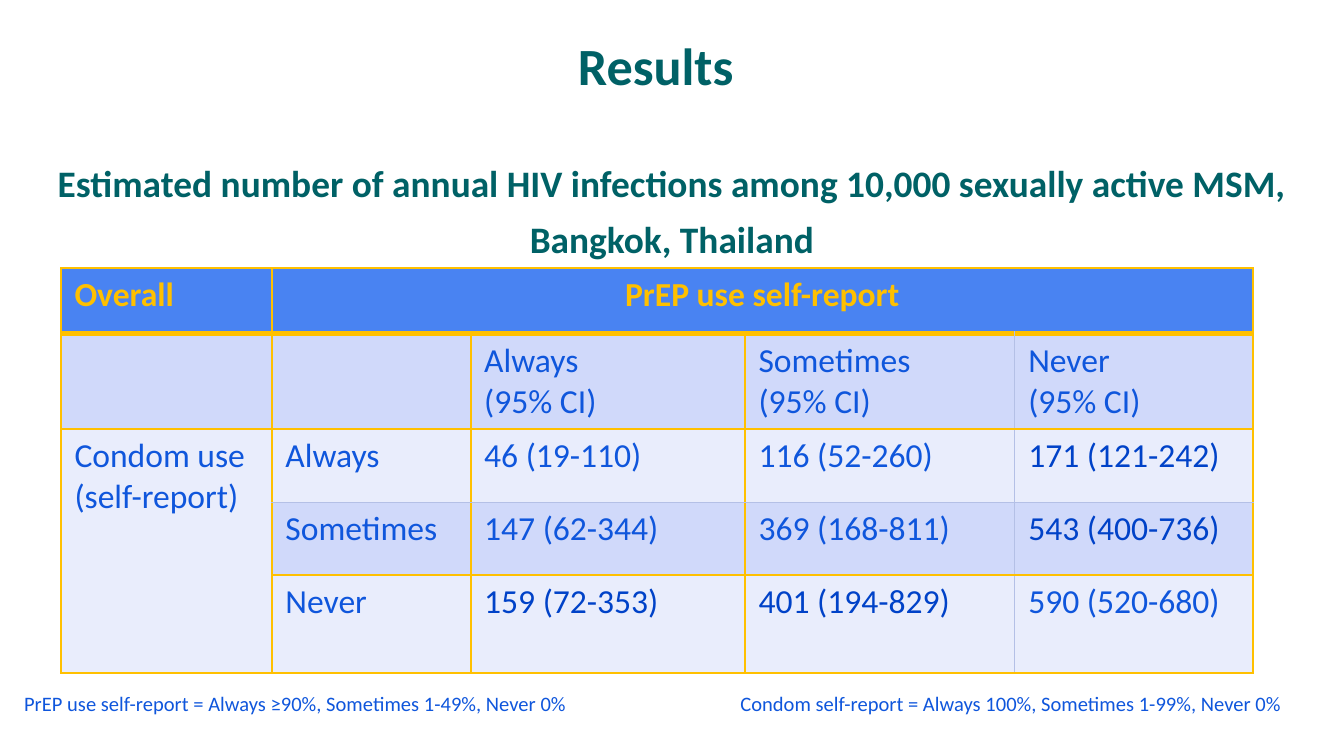
"""Build the results slide with its table of estimated infections."""
from dataclasses import dataclass

from lxml import etree
from pptx import Presentation
from pptx.dml.color import RGBColor
from pptx.enum.text import MSO_ANCHOR, MSO_AUTO_SIZE, PP_ALIGN
from pptx.oxml.ns import qn
from pptx.shapes.base import BaseShape
from pptx.slide import Slide
from pptx.table import _Cell
from pptx.text.text import TextFrame
from pptx.util import Pt

LEFT, CENTER = PP_ALIGN.LEFT, PP_ALIGN.CENTER
TOP, BOTTOM = MSO_ANCHOR.TOP, MSO_ANCHOR.BOTTOM
FIXED, GROW = MSO_AUTO_SIZE.NONE, MSO_AUTO_SIZE.SHAPE_TO_FIT_TEXT

TEAL = RGBColor(0x00, 0x61, 0x66)
GOLD = RGBColor(0xFF, 0xC0, 0x00)
BLUE = RGBColor(0x0F, 0x56, 0xDC)
NAVY = RGBColor(0x00, 0x42, 0xC8)
HEADER = RGBColor(0x49, 0x83, 0xF2)
DARK = RGBColor(0xD0, 0xD9, 0xFA)
LIGHT = RGBColor(0xE9, 0xED, 0xFC)
HAIR = RGBColor(0xB4, 0xC0, 0xE6)

COLS = (113, 106.5, 147, 144.5, 127.5)
ROWS = (35.3, 46, 39, 39, 52.5)
CELLS = (
    ("Overall", "PrEP use self-report", "", "", ""),
    ("", "", "Always\n(95% CI)", "Sometimes\n(95% CI)", "Never\n(95% CI)"),
    ("Condom use (self-report)", "Always", "46 (19-110)", "116 (52-260)", "171 (121-242)"),
    ("", "Sometimes", "147 (62-344)", "369 (168-811)", "543 (400-736)"),
    ("", "Never", "159 (72-353)", "401 (194-829)", "590 (520-680)"),
)
STRONG = {(2, 4), (3, 4), (4, 2), (4, 3)}


@dataclass
class Label:
    """Hold the text, place and look of one text box."""
    text: str
    left: float
    top: float
    width: float
    height: float
    size: float
    color: RGBColor
    bold: bool = False
    align: PP_ALIGN = LEFT
    anchor: MSO_ANCHOR = TOP
    fit: MSO_AUTO_SIZE = GROW
    lead: float | None = None


HEAD = Label("Estimated number of annual HIV infections among 10,000 sexually active MSM, "
             "Bangkok, Thailand", 0, 78.5, 720, 64.8, 20, TEAL, True, CENTER, BOTTOM, FIXED, 30)
LABELS = (
    Label("Results", 290, 6.5, 122.5, 48.5, 28, TEAL, True, CENTER, BOTTOM, FIXED, 30),
    Label("PrEP use self-report = Always ≥90%, Sometimes 1-49%, Never 0%",
          5.8, 366.5, 317, 20.9, 11, BLUE),
    Label("Condom self-report = Always 100%, Sometimes 1-99%, Never 0%",
          389.5, 366.5, 317, 20.9, 11, BLUE),
)


def write(frame: TextFrame, text: str, size: float, color: RGBColor,
          bold: bool, align: PP_ALIGN) -> None:
    """Fill a text frame and format its runs."""
    frame.text = text
    look = {"name": "Calibri", "size": Pt(size), "bold": bold}
    for para in frame.paragraphs:
        para.alignment = align
        for run in para.runs:
            for key, value in look.items():
                setattr(run.font, key, value)
            run.font.color.rgb = color


def place(shape: BaseShape, label: Label) -> None:
    """Move a text shape into place and set its text."""
    for key in ("left", "top", "width", "height"):
        setattr(shape, key, Pt(getattr(label, key)))
    frame = shape.text_frame
    write(frame, label.text, label.size, label.color, label.bold, label.align)
    look = {"word_wrap": True, "auto_size": label.fit, "vertical_anchor": label.anchor}
    for key, value in look.items():
        setattr(frame, key, value)
    if label.lead:
        frame.paragraphs[0].line_spacing = Pt(label.lead)


def rule(cell: _Cell, side: str, color: RGBColor, width: float) -> None:
    """Draw one border of a cell."""
    props = cell._tc.get_or_add_tcPr()
    line = etree.SubElement(props, qn(f"a:ln{side}"), w=str(Pt(width)))
    fill = etree.SubElement(line, qn("a:solidFill"))
    etree.SubElement(fill, qn("a:srgbClr"), val=str(color))


def border(cell: _Cell, row: int, col: int) -> None:
    """Draw the four borders of a cell by its place in the grid."""
    thin, gold, thick = (HAIR, 0.5), (GOLD, 1), (GOLD, 3)
    across = {1: thick, 3: thin if col else gold}
    down = {4: thin if row else gold}
    edges = {"L": down.get(col, gold), "R": down.get(col + 1, gold),
             "T": across.get(row, gold), "B": across.get(row + 1, gold)}
    for side, (color, width) in edges.items():
        rule(cell, side, color, width)


def grid(slide: Slide) -> None:
    """Add the table of estimates."""
    table = slide.shapes.add_table(len(ROWS), len(COLS), Pt(32.7), Pt(143.5),
                                   Pt(sum(COLS)), Pt(sum(ROWS))).table
    for col, width in zip(table.columns, COLS):
        col.width = Pt(width)
    for row, height in zip(table.rows, ROWS):
        row.height = Pt(height)
    for r, texts in enumerate(CELLS):
        for c, text in enumerate(texts):
            cell = table.cell(r, c)
            border(cell, r, c)
            cell.fill.solid()
            cell.fill.fore_color.rgb = HEADER if r == 0 else DARK if r % 2 else LIGHT
            color = GOLD if r == 0 else NAVY if (r, c) in STRONG else BLUE
            write(cell.text_frame, text, 18, color, r == 0, CENTER if r == 0 and c else LEFT)
    table.cell(0, 1).merge(table.cell(0, 4))
    table.cell(2, 0).merge(table.cell(4, 0))


def main() -> None:
    """Build and save the slide."""
    deck = Presentation()
    deck.slide_width, deck.slide_height = Pt(720), Pt(405)
    slide = deck.slides.add_slide(deck.slide_layouts[5])
    place(slide.shapes.title, HEAD)
    grid(slide)
    for label in LABELS:
        box = slide.shapes.add_textbox(0, 0, 0, 0)
        place(box, label)
    deck.save("out.pptx")


if __name__ == "__main__":
    main()
